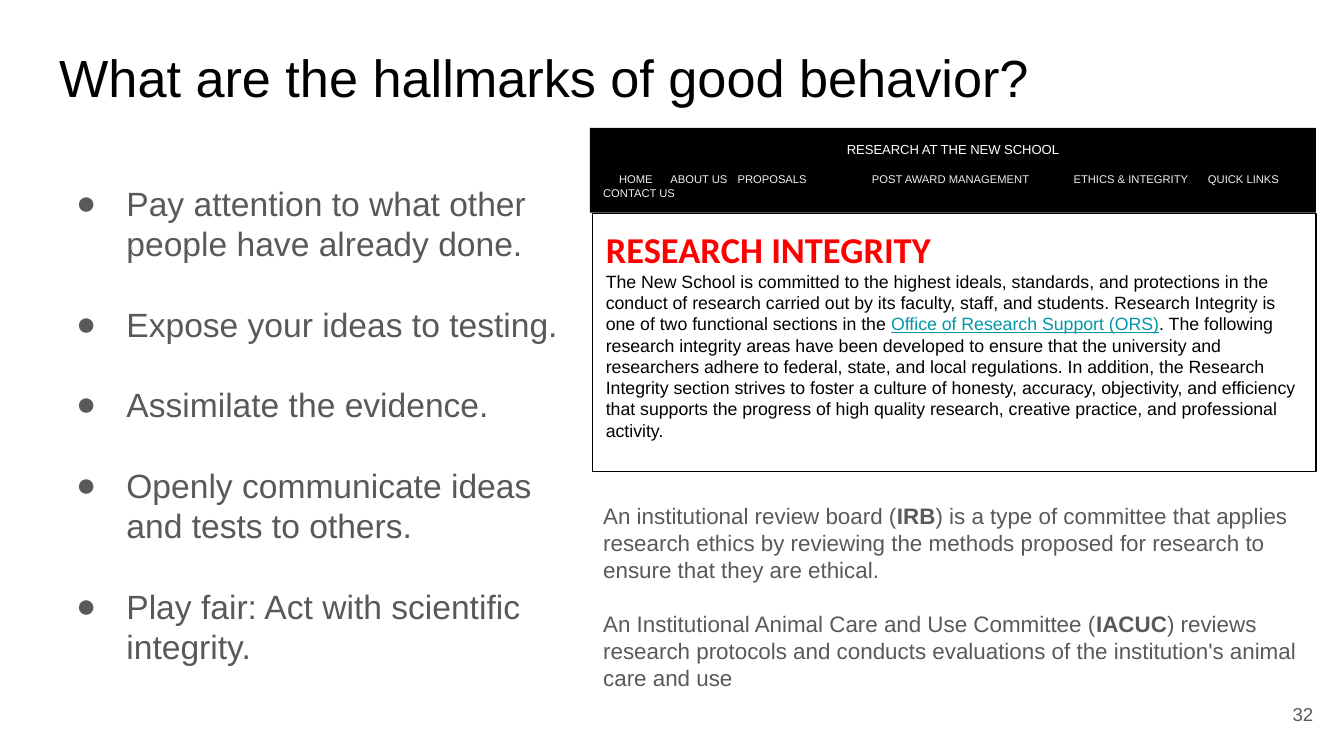
from lxml import etree
from pptx import Presentation
from pptx import util as u
from pptx.dml.color import RGBColor
from pptx.enum import shapes, text
from pptx.oxml.ns import qn

GREY, BLACK, WHITE = "595959", "000000", "FFFFFF"
HALLMARKS = [
    "Pay attention to what other people have already done.",
    "Expose your ideas to testing.",
    "Assimilate the evidence.",
    "Openly communicate ideas and tests to others.",
    "Play fair: Act with scientific integrity.",
]
COMMITTEES = [
    ("An institutional review board (", "IRB",
     ") is a type of committee that applies research ethics by reviewing the methods "
     "proposed for research to ensure that they are ethical."),
    ("An Institutional Animal Care and Use Committee (", "IACUC",
     ") reviews research protocols and conducts evaluations of the institution's animal care and use"),
]
MENU = [
    ("HOME", 0.3), ("ABOUT US", 1.22), ("PROPOSALS", 2.58), ("POST AWARD MANAGEMENT", 4.19),
    ("ETHICS & INTEGRITY", 7.46), ("QUICK LINKS", 9.91), ("CONTACT US", 11.54),
]
INTEGRITY = [
    ("The New School is committed to the highest ideals, standards, and protections in the "
     "conduct of research carried out by its faculty, staff, and students. Research Integrity "
     "is one of two functional sections in the ", BLACK, False),
    ("Office of Research Support (ORS)", "0097A7", True),
    (". The following research integrity areas have been developed to ensure that the "
     "university and researchers adhere to federal, state, and local regulations. In addition, "
     "the Research Integrity section strives to foster a culture of honesty, accuracy, "
     "objectivity, and efficiency that supports the progress of high quality research, creative "
     "practice, and professional activity.", BLACK, False),
]


def color(value):
    """Turn a hex string into a colour."""
    return RGBColor.from_string(value)


def prepare_frame(shape):
    """Give a shape's text frame its wrapping and margins, and return it."""
    frame = shape.text_frame
    frame.word_wrap = True
    frame.vertical_anchor = text.MSO_ANCHOR.TOP
    frame.margin_left = frame.margin_right = u.Cm(0.25)
    frame.margin_top = frame.margin_bottom = u.Cm(0.25)
    return frame


def add_text_frame(slide, box):
    """Add a text box at the given box in centimetres and return its frame."""
    return prepare_frame(slide.shapes.add_textbox(*map(u.Cm, box)))


def add_panel(slide, box, fill, line=None):
    """Add a filled rectangle and return its text frame."""
    shape = slide.shapes.add_shape(shapes.MSO_SHAPE.RECTANGLE, *map(u.Cm, box))
    shape.shadow.inherit = False
    shape.fill.solid()
    shape.fill.fore_color.rgb = color(fill)
    if line:
        shape.line.color.rgb = color(line)
        shape.line.width = u.Pt(0.75)
    else:
        shape.line.fill.background()
    return prepare_frame(shape)


def add_paragraph(frame, index, gap=0, align=text.PP_ALIGN.LEFT):
    """Return the paragraph at an index, spaced from the one before it."""
    paragraph = frame.add_paragraph() if index else frame.paragraphs[0]
    paragraph.alignment = align
    if index and gap:
        paragraph.space_before = u.Pt(gap)
    return paragraph


def add_run(paragraph, words, size, ink, bold=False, underline=False, name="Arial"):
    """Add one formatted run to a paragraph."""
    run = paragraph.add_run()
    run.text = words
    font = run.font
    font.name, font.size, font.bold, font.underline = name, u.Pt(size), bold, underline
    font.color.rgb = color(ink)


def add_bullet(paragraph):
    """Give a paragraph a round grey bullet with a hanging indent."""
    properties = paragraph._p.get_or_add_pPr()
    properties.set("marL", str(u.Cm(1.27)))
    properties.set("indent", str(-u.Cm(0.95)))
    bullet_color = etree.SubElement(properties, qn("a:buClr"))
    etree.SubElement(bullet_color, qn("a:srgbClr"), val=GREY)
    etree.SubElement(properties, qn("a:buFont"), typeface="Arial")
    etree.SubElement(properties, qn("a:buChar"), char="●")


def add_tabs(paragraph, stops):
    """Indent a paragraph to its first stop and set tabs at the others."""
    properties = paragraph._p.get_or_add_pPr()
    properties.set("marL", "0")
    properties.set("indent", str(u.Cm(stops[0])))
    tabs = etree.SubElement(properties, qn("a:tabLst"))
    for stop in stops[1:]:
        etree.SubElement(tabs, qn("a:tab"), pos=str(u.Cm(stop)), algn="l")


def add_title(slide, box):
    """Add the slide title."""
    paragraph = add_paragraph(add_text_frame(slide, box), 0)
    add_run(paragraph, "What are the hallmarks of good behavior?", 28, BLACK)


def add_hallmarks(slide, box):
    """Add the bulleted list of hallmarks."""
    frame = add_text_frame(slide, box)
    for index, hallmark in enumerate(HALLMARKS):
        paragraph = add_paragraph(frame, index, gap=21.6)
        add_bullet(paragraph)
        add_run(paragraph, hallmark, 18, GREY)


def add_committees(slide, box):
    """Add the descriptions of the two review committees."""
    frame = add_text_frame(slide, box)
    for index, (before, acronym, after) in enumerate(COMMITTEES):
        paragraph = add_paragraph(frame, index, gap=14.4)
        add_run(paragraph, before, 12, GREY)
        add_run(paragraph, acronym, 12, GREY, bold=True)
        add_run(paragraph, after, 12, GREY)


def add_site_header(slide, box):
    """Add the black site header with its menu."""
    frame = add_panel(slide, box, BLACK)
    heading = add_paragraph(frame, 0, align=text.PP_ALIGN.CENTER)
    add_run(heading, "RESEARCH AT THE NEW SCHOOL", 7, WHITE)
    menu = add_paragraph(frame, 1, gap=8.4)
    labels, stops = zip(*MENU)
    add_tabs(menu, stops)
    add_run(menu, "\t".join(labels), 6, "EFEFEF")


def add_integrity_panel(slide, box):
    """Add the outlined statement on research integrity."""
    frame = add_panel(slide, box, WHITE, BLACK)
    heading = add_paragraph(frame, 0)
    add_run(heading, "RESEARCH INTEGRITY", 19.5, "FF0000", bold=True, name="Calibri")
    statement = add_paragraph(frame, 1)
    for words, ink, underline in INTEGRITY:
        add_run(statement, words, 9.5, ink, underline=underline)


def add_slide_number(slide, box):
    """Add the slide number."""
    frame = add_text_frame(slide, box)
    frame.vertical_anchor = text.MSO_ANCHOR.MIDDLE
    add_run(add_paragraph(frame, 0, align=text.PP_ALIGN.RIGHT), "32", 10, GREY)


def main():
    """Build the slide and save it."""
    presentation = Presentation()
    presentation.slide_width, presentation.slide_height = u.Cm(25.4), u.Cm(14.29)
    slide = presentation.slides.add_slide(presentation.slide_layouts[6])
    add_title(slide, (0.87, 0.61, 23.67, 1.6))
    add_hallmarks(slide, (0.87, 3.2, 10.64, 9.5))
    add_slide_number(slide, (23.55, 12.95, 1.52, 1.09))
    add_committees(slide, (11.15, 9.25, 13.67, 2.39))
    add_site_header(slide, (11.15, 2.42, 13.72, 1.6))
    add_integrity_panel(slide, (11.2, 4.04, 13.67, 4.88))
    presentation.save("out.pptx")


if __name__ == "__main__":
    main()
